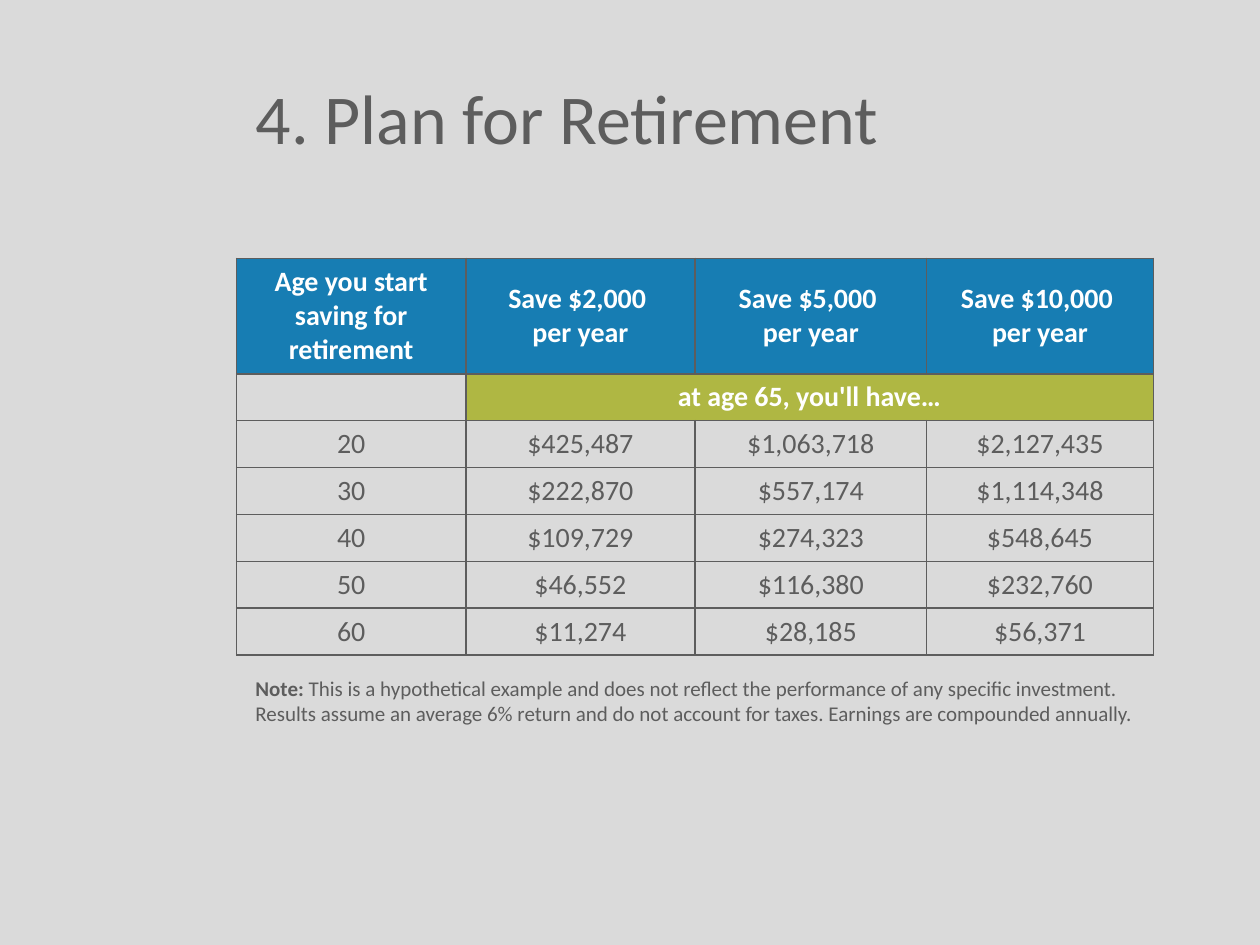
from pptx import Presentation, util as u
from pptx.dml.color import RGBColor
from pptx.enum import text
from pptx.oxml import parse_xml
from pptx.oxml.ns import nsdecls

GREY = RGBColor(0x5D, 0x5D, 0x5D)
WHITE = RGBColor(0xFF, 0xFF, 0xFF)
BLUE = RGBColor(0x17, 0x7D, 0xB3)
GREEN = RGBColor(0xAF, 0xB7, 0x43)
BACKGROUND = RGBColor(0xDA, 0xDA, 0xDA)

HEADERS = ["Age you start saving for retirement"] + [
    f"Save {amount} \vper year" for amount in ("$2,000", "$5,000", "$10,000")]
SAVINGS = [
    ["20", "$425,487", "$1,063,718", "$2,127,435"],
    ["30", "$222,870", "$557,174", "$1,114,348"],
    ["40", "$109,729", "$274,323", "$548,645"],
    ["50", "$46,552", "$116,380", "$232,760"],
    ["60", "$11,274", "$28,185", "$56,371"],
]
NOTE = ["This is a hypothetical example and does not reflect the performance of any specific investment. ",
        "Results assume an average 6% return and do not account for taxes. Earnings are compounded annually."]


class Deck:
    """Holds the style and the current slide."""

    def __init__(self, font="Calibri"):
        self.font = font
        self.prs = Presentation()
        self.prs.slide_width, self.prs.slide_height = u.Cm(25.4), u.Cm(19.05)
        self.s = self.prs.slides.add_slide(self.prs.slide_layouts[5])
        fill = self.s.background.fill
        fill.solid()
        fill.fore_color.rgb = BACKGROUND

    def style(self, p, size, color=GREY, bold=False, align=text.PP_ALIGN.LEFT):
        p.alignment = align
        f = p.font
        f.name, f.size, f.bold, f.color.rgb = self.font, u.Pt(size), bold, color

    def title(self, words, left, top, width, height):
        sp = self.s.shapes.title
        sp.left, sp.top, sp.width, sp.height = map(u.Cm, (left, top, width, height))
        tf = sp.text_frame
        tf.text = words
        tf.vertical_anchor = text.MSO_ANCHOR.MIDDLE
        self.style(tf.paragraphs[0], 40)

    def cell(self, cell, words, fill=None, anchor=text.MSO_ANCHOR.TOP):
        tc_pr = cell._tc.get_or_add_tcPr()
        for side in "LRTB":
            tc_pr.append(parse_xml(
                f'<a:ln{side} {nsdecls("a")} w="12700"><a:solidFill>'
                f'<a:srgbClr val="{GREY}"/></a:solidFill></a:ln{side}>'))
        if fill is None:
            cell.fill.background()
        else:
            cell.fill.solid()
            cell.fill.fore_color.rgb = fill
        cell.vertical_anchor = anchor
        p = cell.text_frame.paragraphs[0]
        p.text = words
        self.style(p, 16, GREY if fill is None else WHITE, fill is not None,
                   text.PP_ALIGN.CENTER)

    def table(self, left, top, widths, heights):
        frame = self.s.shapes.add_table(
            len(heights), len(widths), u.Cm(left), u.Cm(top),
            u.Cm(sum(widths)), u.Cm(sum(heights)))
        table = frame.table
        for column, width in zip(table.columns, widths):
            column.width = u.Cm(width)
        for row, height in zip(table.rows, heights):
            row.height = u.Cm(height)
        middle = text.MSO_ANCHOR.MIDDLE
        for c, words in enumerate(HEADERS):
            self.cell(table.cell(0, c), words, BLUE, middle if c else text.MSO_ANCHOR.TOP)
        table.cell(1, 1).merge(table.cell(1, 3))
        for c, words in enumerate(["", "at age 65, you'll have…", "", ""]):
            self.cell(table.cell(1, c), words, GREEN if c else None, middle)
        for r, values in enumerate(SAVINGS, 2):
            for c, words in enumerate(values):
                self.cell(table.cell(r, c), words)

    def note(self, label, lines, left, top, width, height):
        sp = self.s.shapes.add_textbox(*map(u.Cm, (left, top, width, height)))
        tf = sp.text_frame
        tf.word_wrap = True
        p = tf.paragraphs[0]
        self.style(p, 12)
        r = p.add_run()
        r.text, r.font.bold = label, True
        for i, line in enumerate(lines):
            if i:
                p.add_line_break()
            p.add_run().text = line


def main():
    deck = Deck()
    deck.title("4. Plan for Retirement", 4.9, 1.47, 20.04, 1.75)
    deck.table(4.77, 5.21, [4.62, 4.62, 4.67, 4.57], [2.18] + [0.9] * 6)
    deck.note("Note: ", NOTE, 4.9, 13.49, 20.04, 1.27)
    deck.prs.save("out.pptx")


if __name__ == "__main__":
    main()
